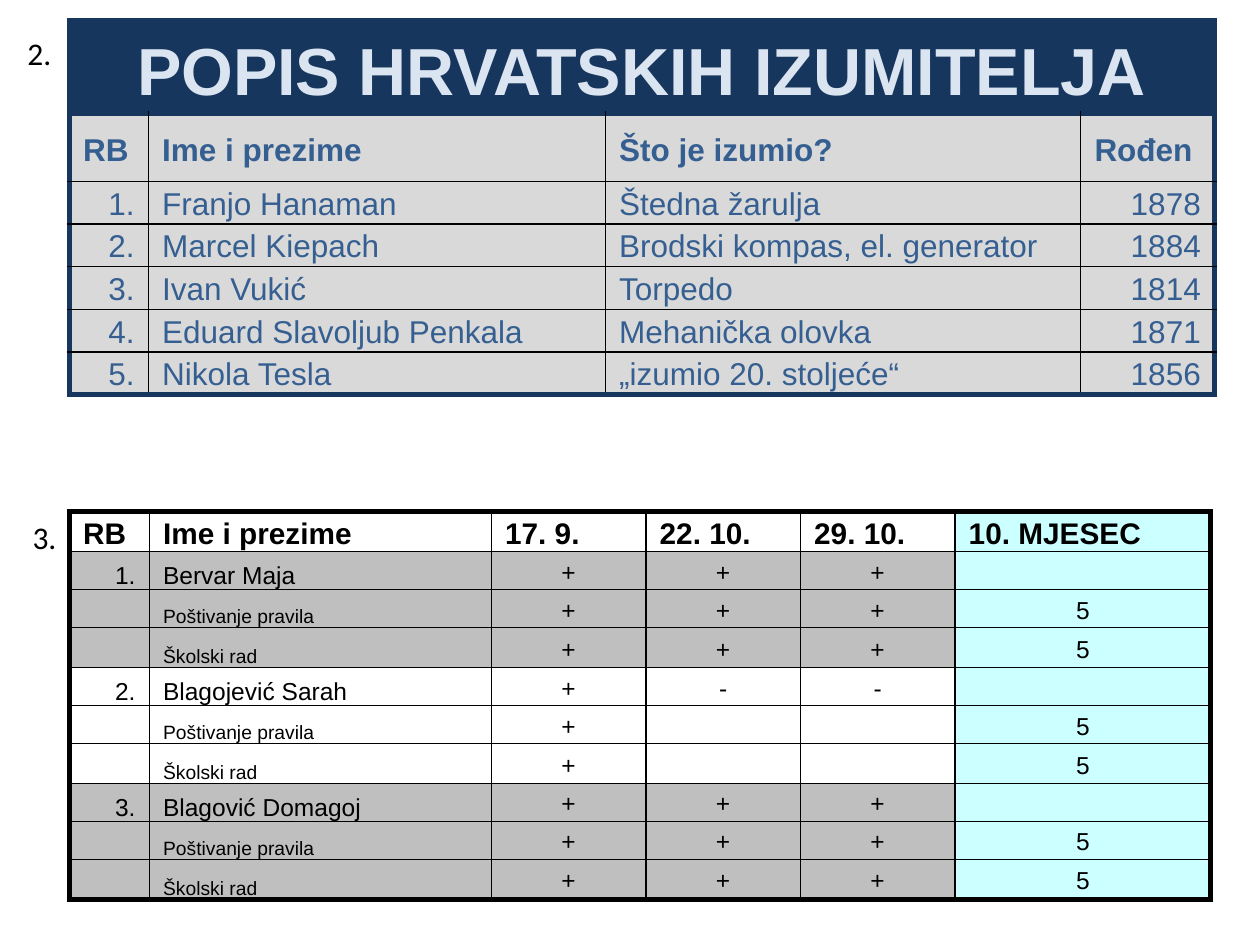
"""Build a slide with a list of inventors and a class record."""
from dataclasses import dataclass

import lxml.etree
import pptx
import pptx.dml.color
import pptx.enum.text
import pptx.oxml.ns
import pptx.slide
import pptx.table
import pptx.util

Pt = pptx.util.Pt
RGBColor = pptx.dml.color.RGBColor
Align = pptx.enum.text.PP_ALIGN
Anchor = pptx.enum.text.MSO_ANCHOR
qn = pptx.oxml.ns.qn

BLACK = RGBColor(0x00, 0x00, 0x00)
NAVY = RGBColor(0x17, 0x36, 0x5D)
BLUE = RGBColor(0x36, 0x5F, 0x91)
PALE_BLUE = RGBColor(0xDB, 0xE5, 0xF1)
LIGHT_GREY = RGBColor(0xD9, 0xD9, 0xD9)
GREY = RGBColor(0xBF, 0xBF, 0xBF)
CYAN = RGBColor(0xCC, 0xFF, 0xFF)

INVENTORS = [
    ("Franjo Hanaman", "Štedna žarulja", "1878"),
    ("Marcel Kiepach", "Brodski kompas, el. generator", "1884"),
    ("Ivan Vukić", "Torpedo", "1814"),
    ("Eduard Slavoljub Penkala", "Mehanička olovka", "1871"),
    ("Nikola Tesla", "„izumio 20. stoljeće“", "1856"),
]
RECORD_HEADINGS = ["RB", "Ime i prezime", "17. 9.", "22. 10.", "29. 10.", "10. MJESEC"]
PUPILS = [
    ("Bervar Maja", ["+++", "+++", "+++"], GREY),
    ("Blagojević Sarah", ["+--", "+", "+"], None),
    ("Blagović Domagoj", ["+++", "+++", "+++"], GREY),
]


@dataclass
class Entry:
    text: str
    size: float
    color: RGBColor = BLACK
    bold: bool = False
    align: Align = Align.LEFT
    anchor: Anchor = Anchor.MIDDLE
    fill: RGBColor | None = None


@dataclass
class Grid:
    left: float
    top: float
    widths: list[float]
    heights: list[float]
    frame: RGBColor
    rows: list[list[Entry]]
    title: Entry | None = None


@dataclass
class Label:
    text: str
    left: float
    top: float


def inventor_rows() -> list[list[Entry]]:
    """Return the heading row and one row for each inventor."""
    headings = ["RB", "Ime i prezime", "Što je izumio?", "Rođen"]
    rows = [[Entry(text, 18, BLUE, True, fill=LIGHT_GREY) for text in headings]]
    aligns = [Align.RIGHT, Align.LEFT, Align.LEFT, Align.RIGHT]
    for number, inventor in enumerate(INVENTORS, 1):
        rows.append([
            Entry(text, 18, BLUE, align=align, anchor=Anchor.TOP, fill=LIGHT_GREY)
            for text, align in zip((f"{number}.", *inventor), aligns)
        ])
    return rows


def record_rows() -> list[list[Entry]]:
    """Return the heading row and three rows for each pupil."""
    rows = [[Entry(text, 17, bold=True) for text in RECORD_HEADINGS]]
    rows[0][-1].fill = CYAN
    for number, (name, marks, fill) in enumerate(PUPILS, 1):
        names = [name, "Poštivanje pravila", "Školski rad"]
        for index, (caption, signs) in enumerate(zip(names, marks)):
            first = index == 0
            rows.append([
                Entry(f"{number}." if first else "", 14, align=Align.RIGHT,
                      anchor=Anchor.BOTTOM, fill=fill),
                Entry(caption, 14 if first else 11, anchor=Anchor.BOTTOM, fill=fill),
                *(Entry(sign.strip(), 14, align=Align.CENTER, fill=fill)
                  for sign in signs.ljust(3)),
                Entry("" if first else "5", 14, align=Align.CENTER, fill=CYAN),
            ])
    return rows


def add_border(cell: pptx.table._Cell, side: str, color: RGBColor, width: float) -> None:
    """Add a solid line along one side of a cell."""
    line = lxml.etree.SubElement(
        cell._tc.get_or_add_tcPr(), qn(f"a:ln{side}"), w=str(Pt(width)))
    solid = lxml.etree.SubElement(line, qn("a:solidFill"))
    lxml.etree.SubElement(solid, qn("a:srgbClr"), val=str(color))


def fill_cell(cell: pptx.table._Cell, entry: Entry) -> None:
    """Write an entry into a cell and format it."""
    cell.margin_left = cell.margin_right = Pt(7.9)
    cell.margin_top = cell.margin_bottom = Pt(0)
    cell.vertical_anchor = entry.anchor
    if entry.fill is None:
        cell.fill.background()
    else:
        cell.fill.solid()
        cell.fill.fore_color.rgb = entry.fill
    paragraph = cell.text_frame.paragraphs[0]
    if entry.text:
        paragraph.text = entry.text
    paragraph.alignment = entry.align
    paragraph.line_spacing = 1.15
    paragraph.font.name = "Arial"
    paragraph.font.size = Pt(entry.size)
    paragraph.font.bold = entry.bold
    paragraph.font.color.rgb = entry.color


def add_grid(page: pptx.slide.Slide, grid: Grid) -> None:
    """Draw a framed table with an optional title row."""
    columns = len(grid.widths)
    rows = list(grid.rows)
    if grid.title:
        blanks = [Entry("", 18, fill=grid.title.fill) for _ in range(columns - 1)]
        rows.insert(0, [grid.title, *blanks])
    table = page.shapes.add_table(
        len(rows), columns, Pt(grid.left), Pt(grid.top),
        Pt(sum(grid.widths)), Pt(sum(grid.heights))).table
    table.first_row = table.horz_banding = False
    for column, width in zip(table.columns, grid.widths):
        column.width = Pt(width)
    for row, height in zip(table.rows, grid.heights):
        row.height = Pt(height)
    for r, entries in enumerate(rows):
        titled = grid.title is not None and r == 0
        for c, entry in enumerate(entries):
            framed = {
                "L": c == 0 or titled,
                "R": c == columns - 1 or titled,
                "T": r == 0 or (grid.title is not None and r == 1),
                "B": r == len(rows) - 1 or titled,
            }
            cell = table.cell(r, c)
            for side, outer in framed.items():
                add_border(cell, side, grid.frame if outer else BLACK, 3 if outer else 1)
            fill_cell(cell, entry)
    if grid.title:
        table.cell(0, 0).merge(table.cell(0, columns - 1))


def add_label(page: pptx.slide.Slide, label: Label) -> None:
    """Write a task number beside its table."""
    box = page.shapes.add_textbox(Pt(label.left), Pt(label.top), Pt(28.1), Pt(29))
    box.text_frame.word_wrap = False
    box.text_frame.auto_size = pptx.enum.text.MSO_AUTO_SIZE.SHAPE_TO_FIT_TEXT
    paragraph = box.text_frame.paragraphs[0]
    paragraph.text = label.text
    paragraph.font.name = "Calibri"
    paragraph.font.size = Pt(18)
    paragraph.font.color.rgb = BLACK


def main() -> None:
    """Build the deck and save it."""
    deck = pptx.Presentation()
    deck.slide_width, deck.slide_height = Pt(720), Pt(540)
    page = deck.slides.add_slide(deck.slide_layouts[6])
    record = Grid(39.6, 292.3, [45.7, 195.5, *[88.3] * 3, 146.2],
                  [22.9, *[21.7, 21.7, 22.9] * 3], BLACK, record_rows())
    title = Entry("POPIS HRVATSKIH IZUMITELJA", 38, PALE_BLUE, True, Align.CENTER, fill=NAVY)
    inventors = Grid(39.6, 11.5, [45.2, 261.2, 271.6, 76.5],
                     [53.5, 38.6, *[24.4] * 5], NAVY, inventor_rows(), title)
    for grid in (record, inventors):
        add_grid(page, grid)
    for label in (Label("2.", 8.6, 15.8), Label("3.", 11.5, 292.3)):
        add_label(page, label)
    deck.save("out.pptx")


if __name__ == "__main__":
    main()
